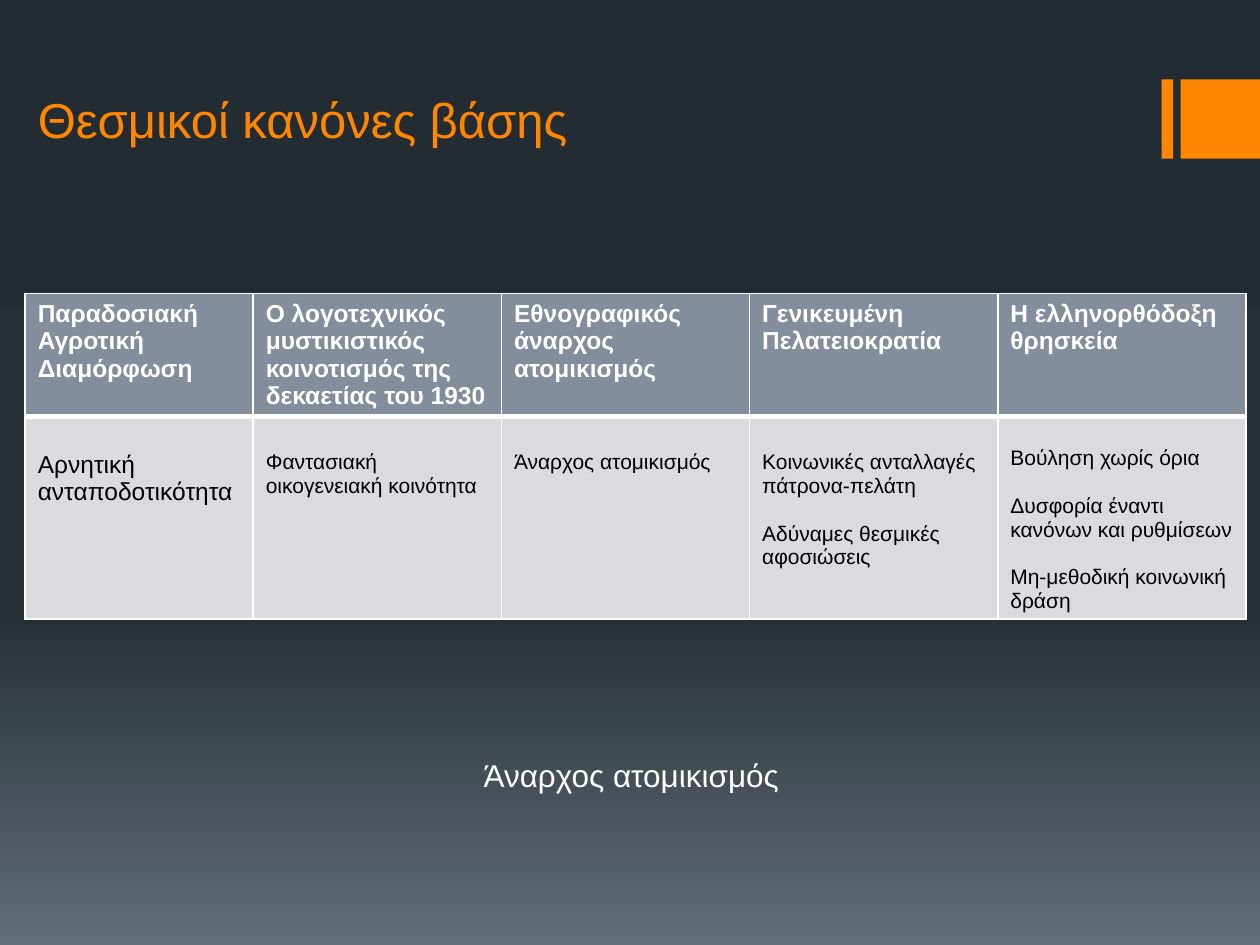
from copy import deepcopy

from pptx import Presentation
from pptx.dml.color import RGBColor
from pptx.enum import shapes, text
from pptx.oxml import parse_xml
from pptx.oxml.ns import nsdecls, qn
from pptx import util as u

ORANGE = RGBColor(0xFF, 0x86, 0x00)
WHITE = RGBColor(0xFF, 0xFF, 0xFF)
BLACK = RGBColor(0x00, 0x00, 0x00)
HEADER_FILL = RGBColor(0x83, 0x8D, 0x9B)
BODY_FILL = RGBColor(0xD9, 0xDB, 0xDE)
BACKGROUND = [
    (0, RGBColor(0x24, 0x2C, 0x33)),
    (0.65, RGBColor(0x27, 0x30, 0x37)),
    (1, RGBColor(0x63, 0x6D, 0x76)),
]
FONT = "Arial"

TITLE = "Θεσμικοί κανόνες βάσης"
CONCLUSION = "Άναρχος ατομικισμός"
# Heading, rules below it, text size, size of the line left free above
COLUMNS = [
    ("Παραδοσιακή Αγροτική Διαμόρφωση", ["Αρνητική ανταποδοτικότητα"], 14, 14),
    ("Ο λογοτεχνικός μυστικιστικός κοινοτισμός της δεκαετίας του 1930",
     ["Φαντασιακή οικογενειακή κοινότητα"], 12, 14),
    ("Εθνογραφικός άναρχος ατομικισμός", ["Άναρχος ατομικισμός"], 12, 14),
    ("Γενικευμένη Πελατειοκρατία",
     ["Κοινωνικές ανταλλαγές πάτρονα-πελάτη", "Αδύναμες θεσμικές αφοσιώσεις"],
     12, 14),
    ("Η ελληνορθόδοξη θρησκεία",
     ["Βούληση χωρίς όρια", "Δυσφορία έναντι κανόνων και ρυθμίσεων",
      "Μη-μεθοδική κοινωνική δράση"], 12, 12),
]
FIRST_WIDTH, OTHER_WIDTH = 1.81, 1.97
ROW_HEIGHTS = (0.97, 1.59)
LEFT = 0.2
LINE = 1.15  # line height as a share of the text size
CELL_MARGIN = 0.05


def write(frame, paragraphs, size, color, bold=False, gap=0):
    frame.text = "\n".join(paragraphs)
    for index, paragraph in enumerate(frame.paragraphs):
        paragraph.alignment = text.PP_ALIGN.LEFT
        paragraph.space_before = u.Pt(gap if index else 0)
        for run in paragraph.runs:
            run.font.name = FONT
            run.font.size = u.Pt(size)
            run.font.bold = bold
            run.font.color.rgb = color


def set_borders(cell, **widths):
    properties = cell._tc.get_or_add_tcPr()
    for index, side in enumerate("LRTB"):
        properties.insert(index, parse_xml(
            f'<a:ln{side} {nsdecls("a")} w="{u.Pt(widths.get(side, 1))}">'
            f'<a:solidFill><a:srgbClr val="{WHITE}"/></a:solidFill></a:ln{side}>'))


def fill_cell(cell, color):
    cell.fill.solid()
    cell.fill.fore_color.rgb = color


prs = Presentation()
prs.slide_width, prs.slide_height = u.Inches(10), u.Inches(7.5)
slide = prs.slides.add_slide(prs.slide_layouts[5])

# Background, dark at the top
background = slide.background.fill
background.gradient()
background.gradient_angle = 270
stop_list = slide.element.find(".//" + qn("a:gsLst"))
stop_list.append(deepcopy(stop_list[-1]))
for stop, (position, color) in zip(background.gradient_stops, BACKGROUND):
    stop.position = position
    stop.color.rgb = color

# Orange accent at the right edge
for left, width in ((9.22, 0.09), (9.37, 0.63)):
    accent = slide.shapes.add_shape(
        shapes.MSO_SHAPE.RECTANGLE,
        *map(u.Inches, (left, 0.63, width, 0.63)))
    accent.shadow.inherit = False
    accent.fill.solid()
    accent.fill.fore_color.rgb = ORANGE
    accent.line.fill.background()

# Title
title = slide.shapes.title
title.left, title.top, title.width, title.height = map(
    u.Inches, (LEFT, 0.36, 8, 0.87))
title.text_frame.vertical_anchor = text.MSO_ANCHOR.BOTTOM
write(title.text_frame, [TITLE], 28, ORANGE)

# Table of rules
table_width = FIRST_WIDTH + OTHER_WIDTH * (len(COLUMNS) - 1)
rules = slide.shapes.add_table(
    len(ROW_HEIGHTS), len(COLUMNS),
    *map(u.Inches, (LEFT, 2.33, table_width, sum(ROW_HEIGHTS)))).table
for row, height in zip(rules.rows, ROW_HEIGHTS):
    row.height = u.Inches(height)
for index, (heading, entries, size, free_line) in enumerate(COLUMNS):
    rules.columns[index].width = u.Inches(OTHER_WIDTH if index else FIRST_WIDTH)
    header, body = rules.cell(0, index), rules.cell(1, index)
    write(header.text_frame, [heading], 14, WHITE, bold=True)
    fill_cell(header, HEADER_FILL)
    set_borders(header, B=3)
    write(body.text_frame, entries, size, BLACK, gap=size * LINE)
    body.margin_top = u.Inches(CELL_MARGIN) + u.Pt(free_line * LINE)
    fill_cell(body, BODY_FILL)
    set_borders(body, T=3)

# Conclusion
conclusion = slide.shapes.add_textbox(
    *map(u.Inches, (3.74, 5.95, 2.57, 0.4))).text_frame
conclusion.word_wrap = False
conclusion.auto_size = text.MSO_AUTO_SIZE.SHAPE_TO_FIT_TEXT
write(conclusion, [CONCLUSION], 18, WHITE)

prs.save("out.pptx")
